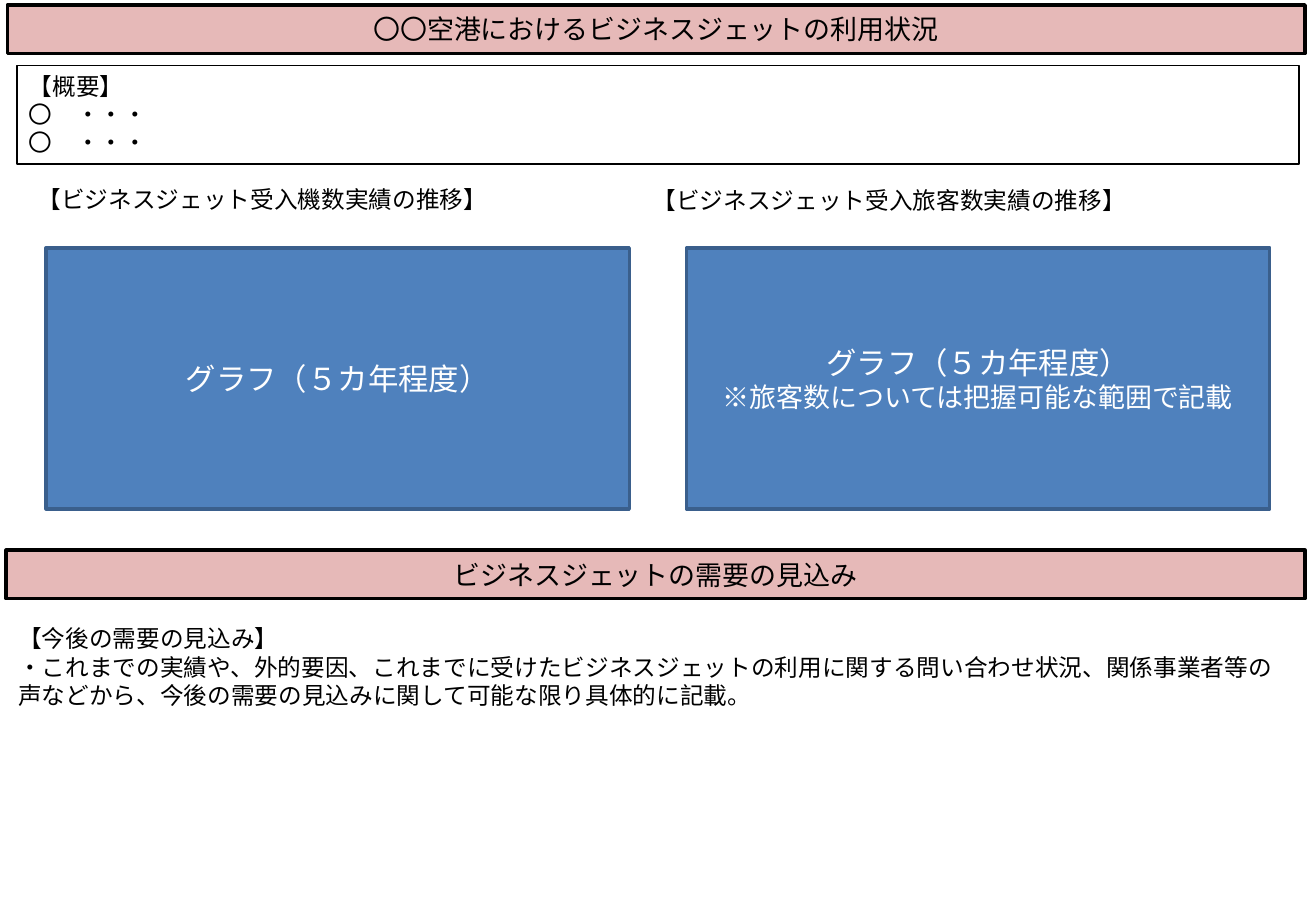
from pptx import Presentation
from pptx.dml.color import RGBColor as Rgb
from pptx.enum.shapes import MSO_SHAPE as Shape
from pptx.enum.text import MSO_ANCHOR as Anchor, MSO_AUTO_SIZE as Fit, PP_ALIGN as Align
from pptx.util import Inches, Pt

# Slide size and a grid of tenths of an inch
WIDE, HIGH = Inches(10.83), Inches(7.5)
COL, ROW = WIDE / 108.3, HIGH / 75

HUE = {"ink": "000000", "paper": "FFFFFF", "rose": "E6B9B8",
       "blue": "4F81BD", "navy": "3A5F8C"}

# Text formats
BANNER = {"size": Pt(16), "name": "Noto Sans CJK JP", "bold": False}
BODY = {"size": Pt(14), "name": "Calibri"}
GRAPH = {"size": Pt(18), "name": "Calibri"}
NOTE = GRAPH | {"size": Pt(16)}
MID = {"word_wrap": True, "auto_size": Fit.NONE, "vertical_anchor": Anchor.MIDDLE}
TOP = {"word_wrap": True, "auto_size": Fit.SHAPE_TO_FIT_TEXT,
       "vertical_anchor": Anchor.TOP}


def tint(hue):
    return Rgb.from_string(HUE[hue])


def span(col, row, cols, rows):
    return [round(n) for n in (col * COL, row * ROW, cols * COL, rows * ROW)]


def style(item, form):
    for key, value in form.items():
        setattr(item, key, value)


def paint(box, fill, line, width):
    if fill:
        box.fill.solid()
        box.fill.fore_color.rgb = tint(fill)
    else:
        box.fill.background()
    box.line.color.rgb = tint(line)
    box.line.width = Pt(width)


def write(box, lines, frame, hue="ink", align=Align.LEFT):
    """Each line is a pair of text and font format."""
    text = box.text_frame
    style(text, frame)
    for i, (words, form) in enumerate(lines):
        para = text.paragraphs[0] if i == 0 else text.add_paragraph()
        para.alignment = align
        run = para.add_run()
        run.text = words
        style(run.font, form)
        run.font.color.rgb = tint(hue)


def add_box(slide, place, fill, line, width):
    box = slide.shapes.add_shape(Shape.RECTANGLE, *span(*place))
    box.shadow.inherit = False
    paint(box, fill, line, width)
    return box


def add_title(slide, words, place):
    title = slide.shapes.title
    style(title, dict(zip(("left", "top", "width", "height"), span(*place))))
    paint(title, "rose", "ink", 2)
    write(title, [(words, BANNER)], MID, align=Align.CENTER)


def add_banner(slide, words, place):
    box = add_box(slide, place, "rose", "ink", 2)
    write(box, [(words, BANNER)], MID, align=Align.CENTER)


def add_text(slide, lines, place):
    box = slide.shapes.add_textbox(*span(*place))
    write(box, [(words, BODY) for words in lines], TOP)


def add_graph(slide, lines, col):
    box = add_box(slide, (col, 20.4, 48, 21.5), "blue", "navy", 2)
    write(box, lines, MID, "paper", Align.CENTER)


def main():
    deck = Presentation()
    deck.slide_width, deck.slide_height = WIDE, HIGH
    slide = deck.slides.add_slide(deck.slide_layouts[5])

    # Usage so far
    add_title(slide, "〇〇空港におけるビジネスジェットの利用状況", (0.6, 0.4, 106.8, 4))
    brief = add_box(slide, (1.4, 5.4, 105.5, 8.1), None, "ink", 0.75)
    write(brief, [(words, BODY) for words in ("【概要】", "〇　・・・", "〇　・・・")], TOP)

    # Two graph panels with headings
    graph = ("グラフ（５カ年程度）", GRAPH)
    note = ("※旅客数については把握可能な範囲で記載", NOTE)
    panels = [("機数", 2.1, 14.7, 3.8, [graph]),
              ("旅客数", 52.7, 14.8, 56.5, [graph, note])]
    for count, col, row, left, lines in panels:
        add_text(slide, [f"【ビジネスジェット受入{count}実績の推移】"], (col, row, 47.2, 3.4))
        add_graph(slide, lines, left)

    # Demand outlook
    add_banner(slide, "ビジネスジェットの需要の見込み", (0.5, 45.3, 106.9, 4))
    add_text(slide, [
        "【今後の需要の見込み】",
        "・これまでの実績や、外的要因、これまでに受けたビジネスジェットの利用に関する"
        "問い合わせ状況、関係事業者等の声などから、今後の需要の見込みに関して"
        "可能な限り具体的に記載。",
    ], (0.5, 50.9, 106.9, 10.4))

    deck.save("out.pptx")


if __name__ == "__main__":
    main()
